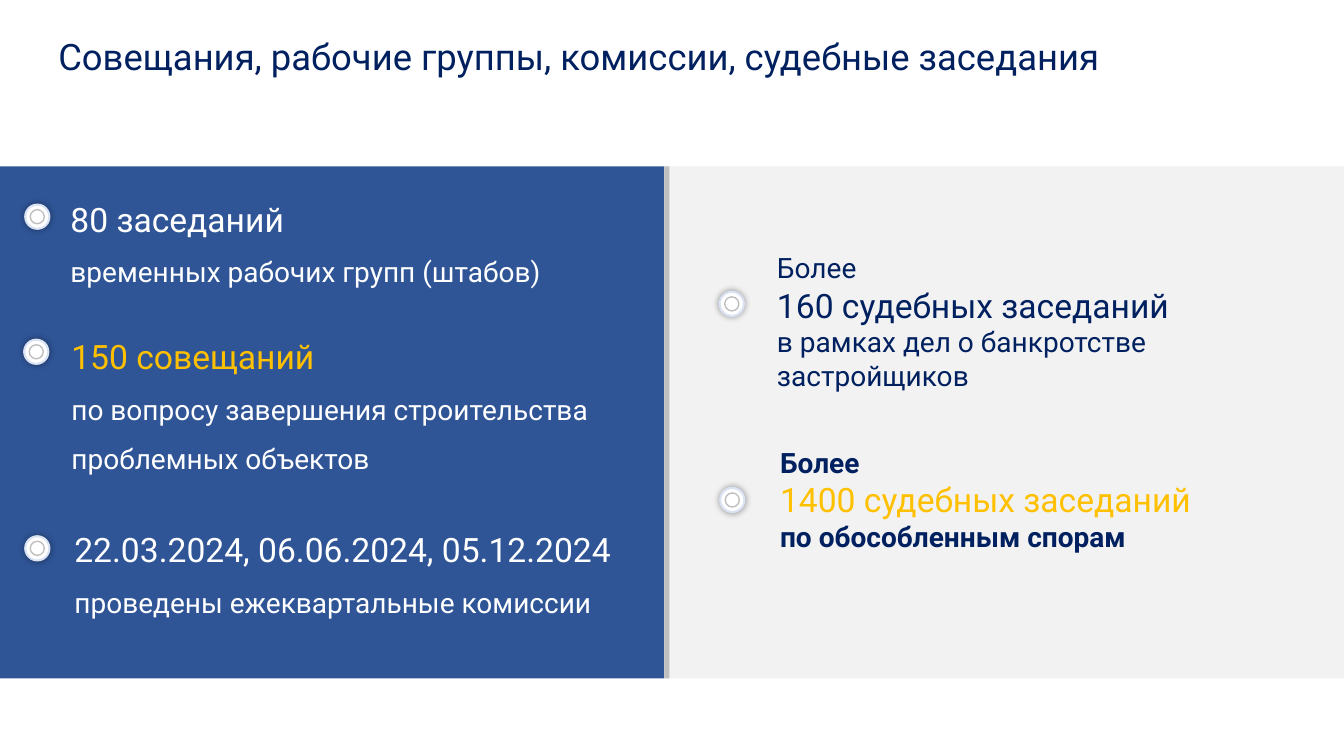
from dataclasses import dataclass
from typing import Optional

from lxml import etree
from pptx import Presentation
from pptx import util as u
from pptx.dml.color import RGBColor
from pptx.enum import shapes, text
from pptx.oxml.ns import qn

COLUMNS, ROWS = 160, 90
FONT = "Roboto"
LARGE, SMALL = 24, 20
COLORS = {
    "white": "FFFFFF",
    "navy": "002060",
    "blue": "2F5597",
    "gold": "FFC000",
    "pale": "F2F2F2",
    "gray": "BFBFBF",
    "rim": "DAE3F3",
    "black": "000000",
}


@dataclass(frozen=True)
class Area:
    column: float
    row: float
    width: float
    height: float


@dataclass(frozen=True)
class Panel:
    area: Area
    color: str


@dataclass(frozen=True)
class Line:
    words: str
    size: float
    color: str
    bold: bool = False


@dataclass(frozen=True)
class TextBlock:
    area: Area
    lines: tuple[Line, ...]
    spaced: bool = False


@dataclass(frozen=True)
class Marker:
    column: float
    row: float


@dataclass(frozen=True)
class Ring:
    diameter: float
    color: str
    weight: float
    shadowed: bool


SPLIT, TOP, HEIGHT = 79.08, 19.8, 60.96
PANELS = (
    Panel(Area(SPLIT, TOP, COLUMNS - SPLIT, HEIGHT), "pale"),
    Panel(Area(0, TOP, SPLIT, HEIGHT), "blue"),
    Panel(Area(SPLIT, TOP, 0.6, HEIGHT), "gray"),
)
BLOCKS = (
    TextBlock(Area(5.76, 3.48, 145.44, 6.48), (
        Line("Совещания, рабочие группы, комиссии, судебные заседания", 26, "navy"),
    )),
    TextBlock(Area(7.2, 22.32, 88.8, 12.48), (
        Line("80 заседаний", LARGE, "white"),
        Line("временных рабочих групп (штабов)", SMALL, "white"),
    ), spaced=True),
    TextBlock(Area(7.32, 38.64, 77.28, 18.48), (
        Line("150 совещаний", LARGE, "gold"),
        Line("по вопросу завершения строительства", SMALL, "white"),
        Line("проблемных объектов", SMALL, "white"),
    ), spaced=True),
    TextBlock(Area(7.68, 61.68, 75.6, 12.48), (
        Line("22.03.2024, 06.06.2024, 05.12.2024", LARGE, "white"),
        Line("проведены ежеквартальные комиссии", SMALL, "white"),
    ), spaced=True),
    TextBlock(Area(91.32, 29.28, 67.2, 18.12), (
        Line("Более", SMALL, "navy"),
        Line("160 судебных заседаний", LARGE, "navy"),
        Line("в рамках дел о банкротстве", SMALL, "navy"),
        Line("застройщиков", SMALL, "navy"),
    )),
    TextBlock(Area(91.68, 52.44, 58.08, 14.16), (
        Line("Более", SMALL, "navy", bold=True),
        Line("1400 судебных заседаний", LARGE, "gold"),
        Line("по обособленным спорам", SMALL, "navy", bold=True),
    )),
)
MARKERS = (
    Marker(4.44, 65.28),
    Marker(4.32, 41.88),
    Marker(4.44, 25.8),
    Marker(87.12, 36.18),
    Marker(87.18, 59.52),
)
RINGS = (
    Ring(2.88, "rim", 1.5, True),
    Ring(1.68, "gray", 1, False),
)


def paint(name: str) -> RGBColor:
    return RGBColor.from_string(COLORS[name])


def place(area: Area) -> tuple[u.Length, ...]:
    cell_width, cell_height = u.Inches(13.33) / COLUMNS, u.Inches(7.5) / ROWS
    return (
        u.Emu(round(area.column * cell_width)),
        u.Emu(round(area.row * cell_height)),
        u.Emu(round(area.width * cell_width)),
        u.Emu(round(area.height * cell_height)),
    )


def draw_shape(page, kind, area: Area, color: str, ring: Optional[Ring] = None):
    shape = page.shapes.add_shape(kind, *place(area))
    shape.fill.solid()
    shape.fill.fore_color.rgb = paint(color)
    if ring is None:
        shape.line.fill.background()
    else:
        shape.line.color.rgb = paint(ring.color)
        shape.line.width = u.Pt(ring.weight)
    shape.shadow.inherit = False
    return shape


def add_glow_shadow(shape) -> None:
    effects = shape._element.spPr.find(qn("a:effectLst"))
    shadow = etree.SubElement(
        effects, qn("a:outerShdw"), blurRad=str(u.Pt(5)), dist="0", dir="0",
        algn="ctr", rotWithShape="0",
    )
    color = etree.SubElement(shadow, qn("a:srgbClr"), val=COLORS["black"])
    etree.SubElement(color, qn("a:alpha"), val="40000")


def draw_marker(page, marker: Marker) -> None:
    for ring in RINGS:
        radius = ring.diameter / 2
        area = Area(marker.column - radius, marker.row - radius,
                    ring.diameter, ring.diameter)
        shape = draw_shape(page, shapes.MSO_SHAPE.OVAL, area, "white", ring)
        if ring.shadowed:
            add_glow_shadow(shape)


def draw_block(page, block: TextBlock) -> None:
    box = page.shapes.add_textbox(*place(block.area))
    frame = box.text_frame
    frame.word_wrap = True
    frame.auto_size = text.MSO_AUTO_SIZE.SHAPE_TO_FIT_TEXT
    for index, line in enumerate(block.lines):
        para = frame.add_paragraph() if index else frame.paragraphs[0]
        if block.spaced:
            para.alignment = text.PP_ALIGN.JUSTIFY
            para.line_spacing = 1.15
            para.space_after = u.Pt(8)
        span = para.add_run()
        span.text = line.words
        span.font.name = FONT
        span.font.size = u.Pt(line.size)
        span.font.bold = line.bold
        span.font.color.rgb = paint(line.color)


def main() -> None:
    deck = Presentation()
    deck.slide_width, deck.slide_height = u.Inches(13.33), u.Inches(7.5)
    page = deck.slides.add_slide(deck.slide_layouts[6])
    for panel in PANELS:
        draw_shape(page, shapes.MSO_SHAPE.RECTANGLE, panel.area, panel.color)
    for block in BLOCKS:
        draw_block(page, block)
    for marker in MARKERS:
        draw_marker(page, marker)
    deck.save("out.pptx")


if __name__ == "__main__":
    main()
